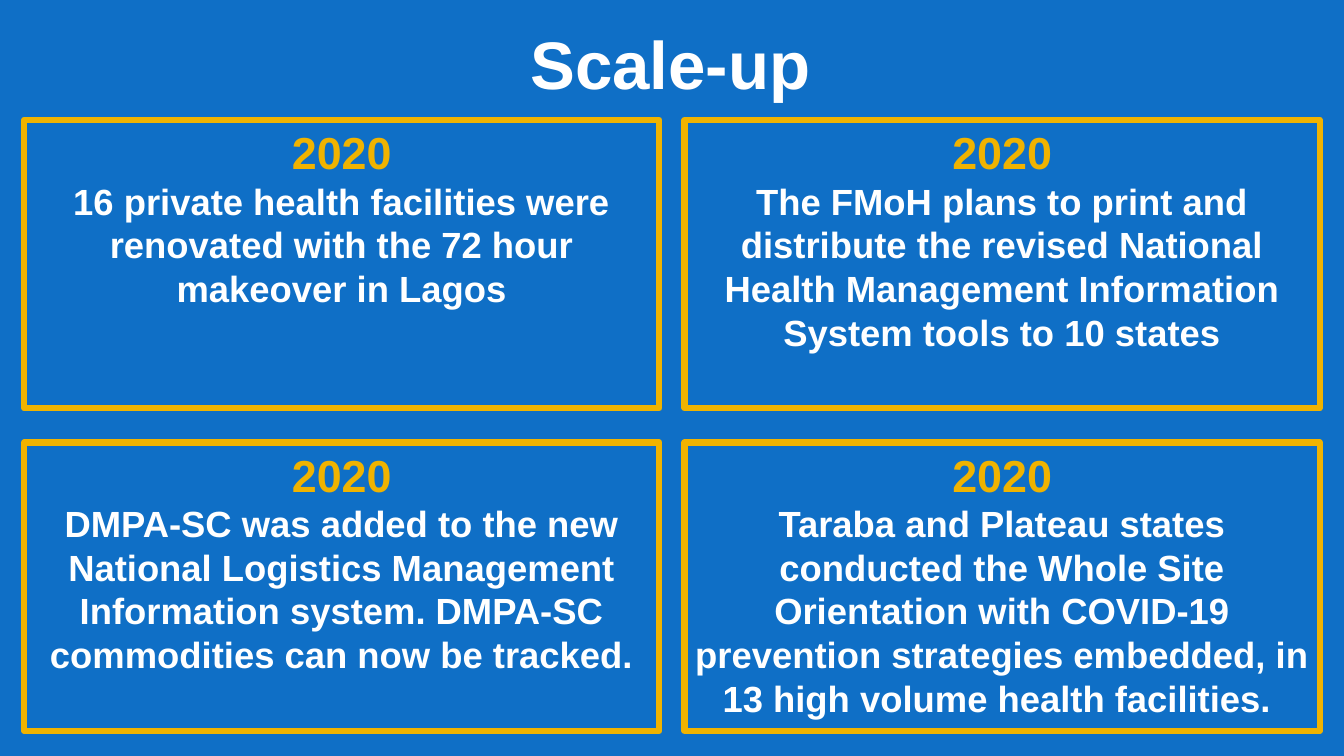
"""Build the Scale-up slide: a title above a two by two grid of framed notes."""
from pptx import Presentation
from pptx.dml.color import RGBColor
from pptx.enum.shapes import MSO_SHAPE as Shape
from pptx.enum.text import MSO_ANCHOR as Anchor, PP_ALIGN as Align
from pptx.util import Inches, Pt

TITLE = "Scale-up"
NOTES = [
    ("2020", "16 private health facilities were renovated with the 72 hour "
             "makeover in Lagos"),
    ("2020", "The FMoH plans to print and distribute the revised National "
             "Health Management Information System tools to 10 states"),
    ("2020", "DMPA-SC was added to the new National Logistics Management "
             "Information system. DMPA-SC commodities can now be tracked."),
    ("2020", "Taraba and Plateau states conducted the Whole Site Orientation "
             "with COVID-19 prevention strategies embedded, in 13 high volume "
             "health facilities. "),
]
COLORS = {"blue": "0F6FC6", "gold": "F0B300", "white": "FFFFFF"}
STYLES = {
    "title": ({"name": "Arial", "size": Pt(48), "bold": True}, "white", Align.LEFT),
    "year": ({"name": "Arial", "size": Pt(32), "bold": True}, "gold", Align.CENTER),
    "note": ({"name": "Arial", "size": Pt(26), "bold": True}, "white", Align.CENTER),
}
FRAME = {"vertical_anchor": Anchor.TOP, "margin_left": Inches(0.1),
         "margin_right": Inches(0.1), "margin_top": Inches(0.05),
         "margin_bottom": Inches(0.05)}
LEFT, TOP, WIDTH, HEIGHT = 0.24, 1.19, 6.3, 2.86
STEP_X, STEP_Y = 6.55, 3.2


def tint(name):
    return RGBColor.from_string(COLORS[name])


def paint(fill, name):
    fill.solid()
    fill.fore_color.rgb = tint(name)


def write(para, text, style):
    font, color, align = STYLES[style]
    run = para.add_run()
    run.text = text
    apply(run.font, font)
    run.font.color.rgb = tint(color)
    apply(para, {"alignment": align, "line_spacing": 1.0})


def apply(item, values):
    for key, value in values.items():
        setattr(item, key, value)


def add_title(slide):
    title = slide.shapes.title
    apply(title, {"left": Inches(5.16), "top": Inches(0.17),
                  "width": Inches(3.01), "height": Inches(0.91)})
    frame = title.text_frame
    apply(frame, {**FRAME, "word_wrap": False})
    write(frame.paragraphs[0], TITLE, "title")


def add_note(slide, index, year, text):
    row, col = divmod(index, 2)
    box = slide.shapes.add_shape(
        Shape.RECTANGLE, Inches(LEFT + col * STEP_X), Inches(TOP + row * STEP_Y),
        Inches(WIDTH), Inches(HEIGHT))
    box.shadow.inherit = False
    paint(box.fill, "blue")
    paint(box.line.fill, "gold")
    box.line.width = Pt(4.5)
    frame = box.text_frame
    apply(frame, {**FRAME, "word_wrap": True})
    write(frame.paragraphs[0], year, "year")
    write(frame.add_paragraph(), text, "note")


def main():
    deck = Presentation()
    apply(deck, {"slide_width": Inches(13.33), "slide_height": Inches(7.5)})
    slide = deck.slides.add_slide(deck.slide_layouts[5])
    paint(slide.background.fill, "blue")
    add_title(slide)
    for index, (year, text) in enumerate(NOTES):
        add_note(slide, index, year, text)
    deck.save("out.pptx")


if __name__ == "__main__":
    main()
